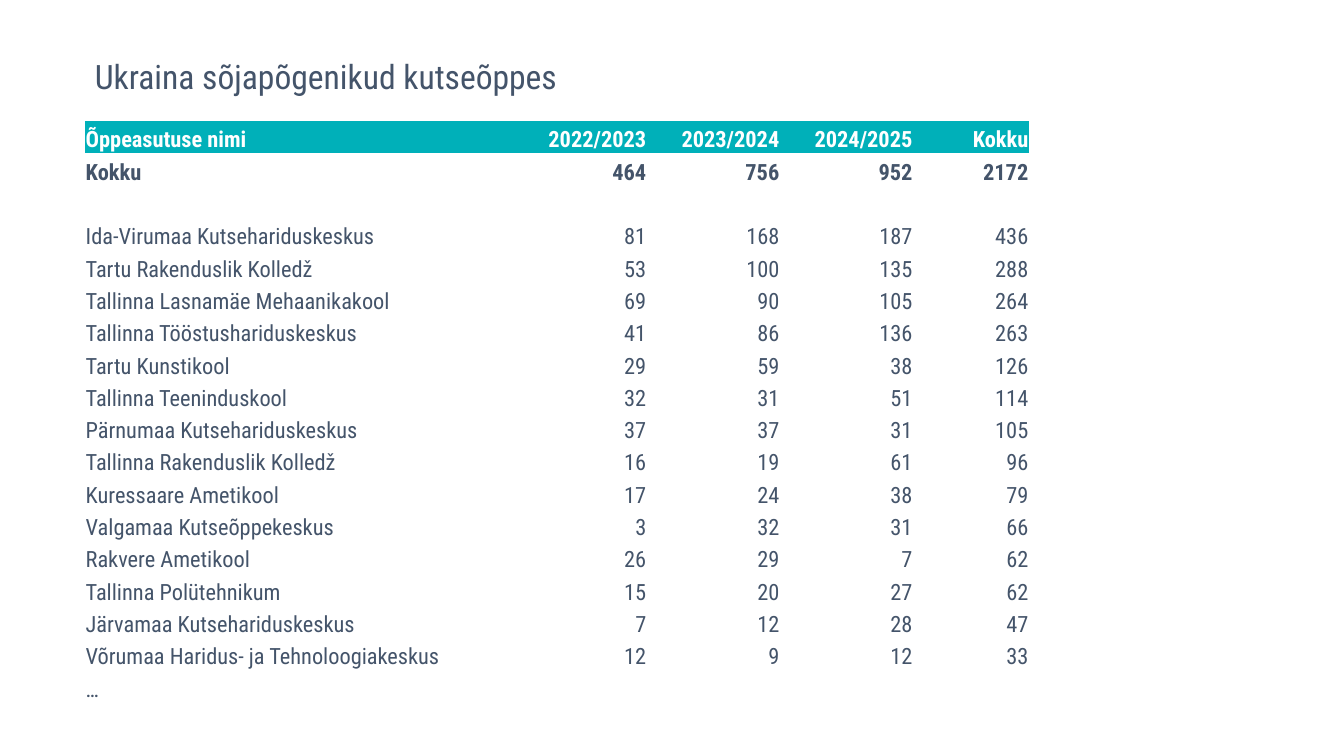
from pptx import Presentation
from pptx import util as u
from pptx.dml.color import RGBColor
from pptx.enum import text
from pptx.oxml import ns

SLATE = RGBColor(0x44, 0x54, 0x6A)
TEAL = RGBColor(0x00, 0xB0, 0xB9)
WHITE = RGBColor(0xFF, 0xFF, 0xFF)
FACE = "Roboto Condensed"
PLAIN_STYLE = "{2D5ABB26-0587-4C30-8999-92F81FD0307C}"
WIDTH, HEIGHT = 13.33, 7.5
LEFT = 0.84
TITLE_BOX = (LEFT, 0.5, 7.01, 0.5)
TABLE_BOX = (LEFT, 1.2, 9.37, 5.77)
COLUMN_WEIGHTS = (4.26, 1.32, 1.32, 1.32, 1.15)

TITLE = "Ukraina sõjapõgenikud kutseõppes"
HEADER = ("Õppeasutuse nimi", "2022/2023", "2023/2024", "2024/2025", "Kokku")
ALL_SCHOOLS = ("Kokku", 464, 756, 952)
SCHOOLS = (
    ("Ida-Virumaa Kutsehariduskeskus", 81, 168, 187),
    ("Tartu Rakenduslik Kolledž", 53, 100, 135),
    ("Tallinna Lasnamäe Mehaanikakool", 69, 90, 105),
    ("Tallinna Tööstushariduskeskus", 41, 86, 136),
    ("Tartu Kunstikool", 29, 59, 38),
    ("Tallinna Teeninduskool", 32, 31, 51),
    ("Pärnumaa Kutsehariduskeskus", 37, 37, 31),
    ("Tallinna Rakenduslik Kolledž", 16, 19, 61),
    ("Kuressaare Ametikool", 17, 24, 38),
    ("Valgamaa Kutseõppekeskus", 3, 32, 31),
    ("Rakvere Ametikool", 26, 29, 7),
    ("Tallinna Polütehnikum", 15, 20, 27),
    ("Järvamaa Kutsehariduskeskus", 7, 12, 28),
    ("Võrumaa Haridus- ja Tehnoloogiakeskus", 12, 9, 12),
)


def apply(target, formats):
    """Set every attribute named in formats on the target."""
    for name, value in formats.items():
        setattr(target, name, value)


def write(para, words, size, color, bold=False):
    """Add one formatted span to a paragraph."""
    span = para.add_run()
    span.text = words
    apply(span.font, {"name": FACE, "size": u.Pt(size), "bold": bold})
    span.font.color.rgb = color


def with_total(row):
    """Append the sum of the yearly counts to a school's row."""
    return (*row, sum(row[1:]))


def place_title(page, box):
    """Move the title placeholder into the box and fill it."""
    title = page.shapes.title
    left, top, width, height = map(u.Inches, box)
    apply(title, {"left": left, "top": top, "width": width, "height": height})
    apply(title.text_frame, {"word_wrap": True, "auto_size": text.MSO_AUTO_SIZE.NONE})
    para = title.text_frame.paragraphs[0]
    para.alignment = text.PP_ALIGN.LEFT
    write(para, TITLE, 24, SLATE)


def fill_cell(cell, words, is_number, is_header, bold):
    """Format one table cell and write its words."""
    inset = u.Inches(0.01)
    apply(cell, {"margin_left": inset, "margin_right": inset, "margin_top": inset,
                 "margin_bottom": 0, "vertical_anchor": text.MSO_ANCHOR.BOTTOM})
    if is_header:
        cell.fill.solid()
        cell.fill.fore_color.rgb = TEAL
    else:
        cell.fill.background()
    para = cell.text_frame.paragraphs[0]
    para.alignment = text.PP_ALIGN.RIGHT if is_number else text.PP_ALIGN.LEFT
    write(para, words, 16, WHITE if is_header else SLATE, bold)


def place_table(page, box):
    """Build the table of learners by school and year in the box."""
    blank = ("",) * (len(HEADER) - 1)
    rows = [HEADER, with_total(ALL_SCHOOLS), ("", *blank),
            *map(with_total, SCHOOLS), ("…", *blank)]
    frame = page.shapes.add_table(len(rows), len(HEADER), *map(u.Inches, box))
    table = frame.table
    frame.element.find(".//" + ns.qn("a:tableStyleId")).text = PLAIN_STYLE
    apply(table, {"first_row": True, "horz_banding": False})
    for column, weight in zip(table.columns, COLUMN_WEIGHTS):
        column.width = u.Inches(box[2] * weight / sum(COLUMN_WEIGHTS))
    for r, row in enumerate(rows):
        table.rows[r].height = u.Inches(box[3] / len(rows))
        for c, value in enumerate(row):
            fill_cell(table.cell(r, c), str(value), c > 0, r == 0, r < 2)


def main():
    """Build and save the deck."""
    deck = Presentation()
    apply(deck, {"slide_width": u.Inches(WIDTH), "slide_height": u.Inches(HEIGHT)})
    page = deck.slides.add_slide(deck.slide_layouts[5])
    place_title(page, TITLE_BOX)
    place_table(page, TABLE_BOX)
    deck.save("out.pptx")


if __name__ == "__main__":
    main()
